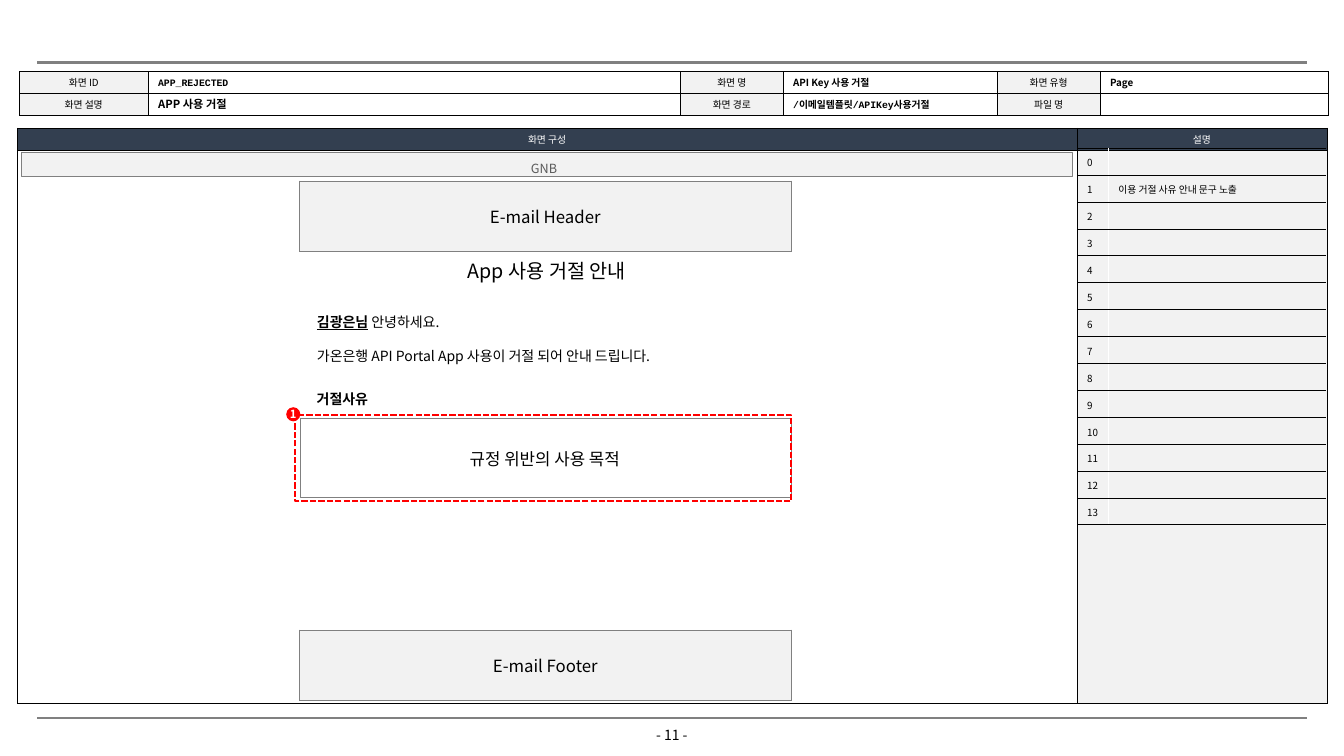
from dataclasses import dataclass

from lxml.etree import SubElement
from pptx import Presentation
from pptx.dml.color import RGBColor as Rgb
from pptx.enum.dml import MSO_LINE_DASH_STYLE as Dash
from pptx.enum.shapes import MSO_CONNECTOR as Connector, MSO_SHAPE as Preset
from pptx.enum.text import MSO_ANCHOR as Anchor, MSO_AUTO_SIZE as AutoSize, PP_ALIGN as Align
from pptx.oxml.ns import qn
from pptx.util import Inches, Pt

SLIDE_W, SLIDE_H = Inches(13.333), Inches(7.5)


@dataclass(frozen=True)
class Theme:
    """Colours, fonts and type sizes of the screen specification."""
    ink: str = "000000"
    white: str = "FFFFFF"
    navy: str = "333F50"
    pale: str = "F2F2F2"
    rule: str = "808080"
    muted: str = "595959"
    alert: str = "FF0000"
    sans: str = "Noto Sans CJK KR"
    mono: str = "Courier New"
    small: int = 7
    label: int = 8
    menu: int = 9
    body: int = 10
    block: int = 12
    title: int = 14


THEME = Theme()
INFO_LEFT, INFO_TOP, INFO_ROW = 1.43, 9.43, 2.9
INFO_COLS = [9.6, 39.6, 7.65, 15.93, 7.65, 17]
INFO_LABELS = [["화면 ID", "", "화면 명", "", "화면 유형", ""],
               ["화면 설명", "", "화면 경로", "", "파일 명", ""]]
INFO_VALUES = [(0, 1, "APP_REJECTED", THEME.small, THEME.mono),
               (1, 1, "APP 사용 거절", THEME.label, THEME.sans),
               (0, 3, "API Key 사용 거절", THEME.small, THEME.sans),
               (1, 3, "/이메일템플릿/APIKey사용거절", THEME.small, THEME.mono),
               (0, 5, "Page", THEME.small, THEME.sans)]
NOTES = {1: "이용 거절 사유 안내 문구 노출"}
NOTE_ROWS = 14


def across(share):
    """Turn a percentage of the slide width into a length."""
    return int(SLIDE_W * share / 100)


def down(share):
    """Turn a percentage of the slide height into a length."""
    return int(SLIDE_H * share / 100)


def area(left, top, width, height):
    """Turn four slide percentages into a position and size."""
    return across(left), down(top), across(width), down(height)


def write(frame, text, size=THEME.body, color=THEME.ink, font=THEME.sans, bold=False,
          align=Align.LEFT, spacing=None, gap=0):
    """Fill a text frame with a string or with paragraphs of (text, strong, underlined) runs."""
    paragraphs = [[(text, bold, False)]] if isinstance(text, str) else text
    for index, pieces in enumerate(paragraphs):
        paragraph = frame.add_paragraph() if index else frame.paragraphs[0]
        paragraph.alignment = align
        paragraph.space_before = Pt(gap if index else 0)
        if spacing:
            paragraph.line_spacing = spacing
        for words, strong, underlined in pieces:
            if not words:
                SubElement(paragraph._p, qn("a:endParaRPr"), sz=str(size * 100))
                continue
            run = paragraph.add_run()
            run.text = words
            run.font.size, run.font.name = Pt(size), font
            run.font.bold, run.font.underline = strong, underlined
            run.font.color.rgb = Rgb.from_string(color)
            properties = run._r.get_or_add_rPr()
            properties.set("kern", "0")
            SubElement(properties, qn("a:ea"), typeface=THEME.sans)


def set_frame(frame, anchor=Anchor.TOP, insets=(0.1, 0.05, 0.1, 0.05), wrap=True):
    """Set wrapping, anchor and insets of a text frame."""
    frame.auto_size, frame.word_wrap, frame.vertical_anchor = AutoSize.NONE, wrap, anchor
    (frame.margin_left, frame.margin_top,
     frame.margin_right, frame.margin_bottom) = map(Inches, insets)


def add_label(slide, place, text, anchor=Anchor.TOP, insets=(0.1, 0.05, 0.1, 0.05), **style):
    """Add a text box."""
    frame = slide.shapes.add_textbox(*area(*place)).text_frame
    set_frame(frame, anchor, insets)
    write(frame, text, **style)


def fill_placeholder(holder, place, text, anchor=Anchor.TOP, wrap=True, **style):
    """Move a template placeholder and write unbulleted text in it."""
    holder.left, holder.top, holder.width, holder.height = area(*place)
    set_frame(holder.text_frame, anchor, wrap=wrap)
    write(holder.text_frame, text, **style)
    for paragraph in holder.text_frame.paragraphs:
        properties = paragraph._p.get_or_add_pPr()
        properties.set("marL", "0")
        properties.set("indent", "0")
        SubElement(properties, qn("a:buNone"))


def add_figure(slide, preset, place, fill=None, line=None, weight=0.75, dash=None):
    """Add a preset shape without shadow and return it."""
    figure = slide.shapes.add_shape(preset, *area(*place))
    figure.shadow.inherit = False
    if fill:
        figure.fill.solid()
        figure.fill.fore_color.rgb = Rgb.from_string(fill)
    else:
        figure.fill.background()
    if line:
        figure.line.color.rgb = Rgb.from_string(line)
        figure.line.width = Pt(weight)
        if dash:
            figure.line.dash_style = dash
    else:
        figure.line.fill.background()
    return figure


def add_rule(slide, height):
    """Add a grey rule across the page."""
    y = down(height)
    rule = slide.shapes.add_connector(Connector.STRAIGHT, across(2.78), y, across(97.28), y)
    rule.line.color.rgb, rule.line.width = Rgb.from_string(THEME.rule), Pt(1.5)
    SubElement(rule._element.spPr, qn("a:effectLst"))


def set_cell(cell, borders, fill, insets):
    """Give a cell its borders, fill and insets."""
    properties = cell._tc.get_or_add_tcPr()
    for side in "LRTB":
        color, weight = borders.get(side, (None, 0))
        edge = SubElement(properties, qn(f"a:ln{side}"), w=str(int(Pt(weight))))
        if color:
            SubElement(SubElement(edge, qn("a:solidFill")), qn("a:srgbClr"), val=color)
        else:
            SubElement(edge, qn("a:noFill"))
    if fill:
        cell.fill.solid()
        cell.fill.fore_color.rgb = Rgb.from_string(fill)
    else:
        cell.fill.background()
    cell.vertical_anchor = Anchor.MIDDLE
    (cell.margin_left, cell.margin_top,
     cell.margin_right, cell.margin_bottom) = map(Inches, insets)


def add_grid(slide, left, top, columns, rows, texts, borders, fill,
             insets=(0.1, 0.03, 0.1, 0.03), **style):
    """Add a table; borders and fill are rules taking row and column."""
    place = area(left, top, sum(columns), sum(rows))
    table = slide.shapes.add_table(len(rows), len(columns), *place).table
    table.first_row = table.horz_banding = False
    for column, width in zip(table.columns, columns):
        column.width = across(width)
    for row, height in zip(table.rows, rows):
        row.height = down(height)
    for r, line in enumerate(texts):
        for c, text in enumerate(line):
            set_cell(table.cell(r, c), borders(r, c), fill(r, c), insets)
            write(table.cell(r, c).text_frame, text, **style)


def boxed(color, weight, sides="LRTB"):
    """Return a border rule with the same line on the given sides."""
    return lambda r, c: dict.fromkeys(sides, (color, weight))


def note_borders(r, c):
    """Black lines between notes and a white line after the number."""
    black = (THEME.ink, 0.25)
    return {"T": black, "B": black, "L" if c else "R": (THEME.white, 0.5)}


def add_page_frame(slide):
    """Add the page rules and number, the information table and the screen frame."""
    add_rule(slide, 8.27)
    add_grid(slide, 2.78, 94.93, [47.25] * 2, [2.8], [["", ""]],
             boxed(THEME.rule, 1.5, "T"), lambda r, c: None, size=THEME.small)
    add_label(slide, (45.9, 96.13, 8.18, 2.27), "- 11 -", insets=(0, 0, 0, 0), align=Align.CENTER)
    thin = boxed(THEME.ink, 0.25)
    add_grid(slide, 1.28, 16.93, [78.85, 18.6], [2.93, 73.2],
             [["화면 구성", "설명"], ["", ""]], thin,
             lambda r, c: THEME.navy if r == 0 else THEME.pale if c else None,
             size=THEME.small, color=THEME.white, align=Align.CENTER)
    add_grid(slide, INFO_LEFT, INFO_TOP, INFO_COLS, [INFO_ROW] * 2, INFO_LABELS, thin,
             lambda r, c: None if c % 2 else THEME.pale, size=THEME.small, align=Align.CENTER)
    for row, column, value, size, font in INFO_VALUES:
        place = (INFO_LEFT + sum(INFO_COLS[:column]), INFO_TOP + row * INFO_ROW,
                 INFO_COLS[column], INFO_ROW)
        add_label(slide, place, value, Anchor.MIDDLE, (0.1, 0, 0.1, 0),
                  size=size, font=font, bold=True, align=Align.JUSTIFY)


def add_email(slide):
    """Add the e-mail mock-up with its marked reason box."""
    menu = add_figure(slide, Preset.RECTANGLE, (1.58, 20.2, 78.23, 3.2), THEME.pale, THEME.rule)
    set_frame(menu.text_frame, Anchor.MIDDLE, (0.04, 0.05, 0.1, 0.05))
    write(menu.text_frame, "GNB", size=THEME.menu, color=THEME.muted,
          align=Align.CENTER, spacing=1.5)
    for top, words in ((23.95, "E-mail Header"), (83.33, "E-mail Footer")):
        add_grid(slide, 22.28, top, [36.6], [9.3], [[words]], boxed(THEME.rule, 0.5),
                 lambda r, c: THEME.pale, size=THEME.block, align=Align.CENTER)
    add_figure(slide, Preset.RECTANGLE, (22.35, 55.33, 36.53, 10.47),
               THEME.white, THEME.rule, 0.25)
    add_label(slide, (24, 58.67, 33.08, 4), "규정 위반의 사용 목적",
              size=THEME.block, align=Align.CENTER)
    add_figure(slide, Preset.RECTANGLE, (21.98, 54.93, 36.9, 11.4),
               line=THEME.alert, weight=1.5, dash=Dash.SQUARE_DOT)
    badge = add_figure(slide, Preset.OVAL, (21.3, 53.87, 1.05, 1.87), THEME.alert)
    set_frame(badge.text_frame, Anchor.MIDDLE, (0, 0, 0, 0), wrap=False)
    write(badge.text_frame, "1", size=THEME.label, color=THEME.white, bold=True,
          align=Align.CENTER)
    add_label(slide, (22.83, 51, 39, 3.6), "거절사유", bold=True)


def main():
    """Build the screen specification slide."""
    deck = Presentation()
    deck.slide_width, deck.slide_height = SLIDE_W, SLIDE_H
    slide = deck.slides.add_slide(deck.slide_layouts[1])
    heading, greeting = slide.placeholders
    add_page_frame(slide)
    fill_placeholder(heading, (33.38, 33.6, 14.63, 4.53), "App 사용 거절 안내", Anchor.MIDDLE,
                     wrap=False, size=THEME.title, align=Align.CENTER)
    fill_placeholder(greeting, (22.83, 40.8, 39, 8.13),
                     [[("김광은님", True, True), (" 안녕하세요.", False, False)],
                      [("가온은행 API Portal App 사용이 거절 되어 안내 드립니다.", False, False)]],
                     gap=12)
    add_grid(slide, 80.14, 19.57, [2.33, 16.2], [3.56] * NOTE_ROWS,
             [[str(n), NOTES.get(n, "")] for n in range(NOTE_ROWS)], note_borders,
             lambda r, c: None, (0.1, 0.05, 0.1, 0.05), size=THEME.small, spacing=Pt(12))
    add_email(slide)
    deck.save("out.pptx")


if __name__ == "__main__":
    main()
